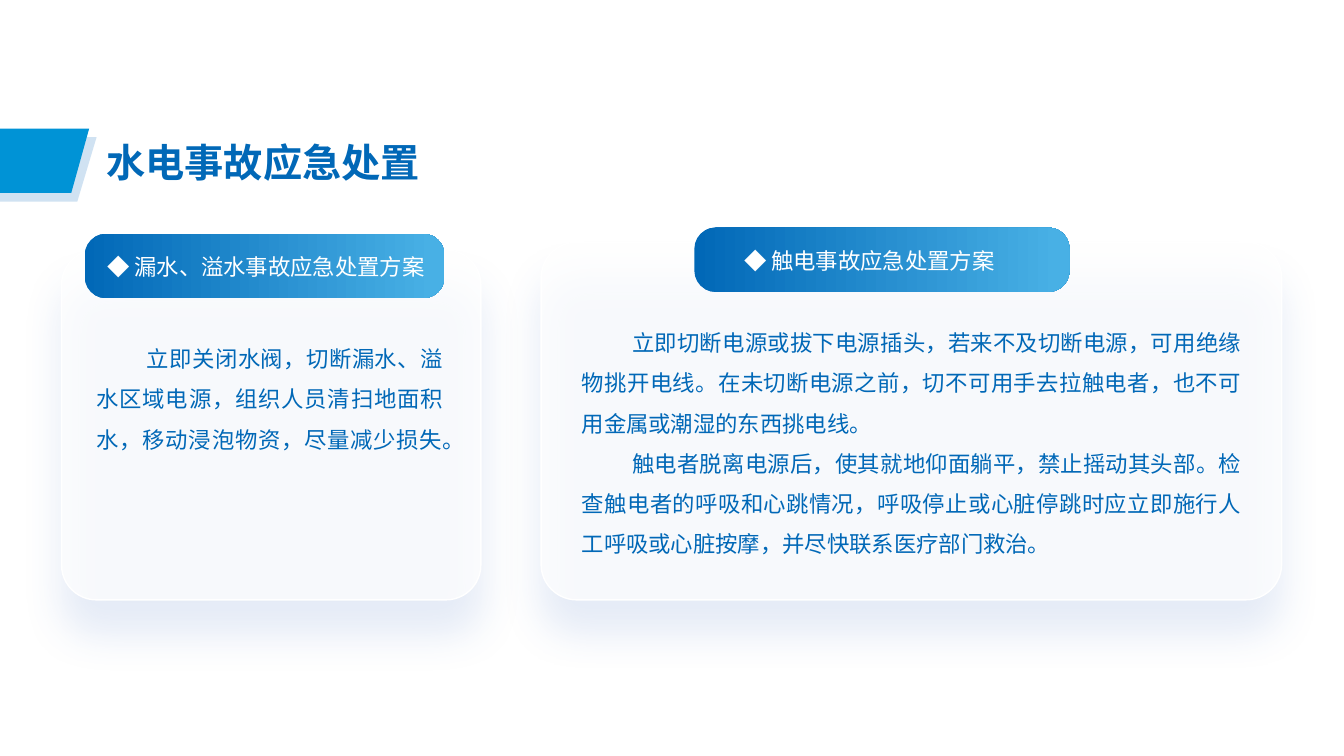
import pptx
import pptx.util
import pptx.dml.color
import pptx.enum.shapes
import pptx.enum.text
import lxml.etree
from pptx.oxml.ns import qn

Pt = pptx.util.Pt
RGB = pptx.dml.color.RGBColor.from_string
KIND = pptx.enum.shapes.MSO_SHAPE
ALIGN = pptx.enum.text.PP_ALIGN

theme = {
    "blue": "0168B7", "sky": "48B0E5", "tab": "0093D6", "pale": "BDD7EE",
    "white": "FFFFFF", "shade": "4472C4",
    "title": 28, "text": 16,
    "sans": "Noto Sans CJK SC", "label": "Noto Sans CJK JP",
}

deck = pptx.Presentation()
deck.slide_width, deck.slide_height = Pt(960), Pt(540)
slide = deck.slides.add_slide(deck.slide_layouts[6])


def add_shape(shapes, kind, box, color=None, alpha=100):
    shape = shapes.add_shape(kind, *[Pt(n) for n in box])
    shape.shadow.inherit = False
    shape.line.fill.background()
    if color:
        shape.fill.solid()
        shape.fill.fore_color.rgb = RGB(theme[color])
        if alpha < 100:
            tint = shape.fill._xPr.find(qn("a:solidFill"))[0]
            lxml.etree.SubElement(tint, qn("a:alpha"), val=str(alpha * 1000))
    return shape


def add_text(shapes, box, lines, size, color, font="sans", inset=True,
             bold=False, align=None, space=None, indent=0):
    area = shapes.add_textbox(*[Pt(n) for n in box])
    frame = area.text_frame
    frame.word_wrap = True
    if not inset:
        frame.margin_left = frame.margin_right = 0
        frame.margin_top = frame.margin_bottom = 0
    frame.text = "\n".join(lines)
    for para in frame.paragraphs:
        para.alignment = align
        para.line_spacing = space
        if indent:
            para._p.get_or_add_pPr().set("indent", str(Pt(indent)))
        para.font.size = Pt(theme[size])
        para.font.bold = bold
        para.font.color.rgb = RGB(theme[color])
        para.font.name = theme[font]
        lxml.etree.SubElement(para.font._rPr, qn("a:ea"), typeface=theme[font])


tabs = [
    ((11.5, 86.5, 46, 69), "pale", 71),
    ((8.7, 82.8, 46, 64), "tab", 100),
]
for box, color, alpha in tabs:
    tab = add_shape(slide.shapes, KIND.FLOWCHART_MANUAL_INPUT, box, color, alpha)
    tab.rotation = 270
    tab._element.spPr.find(qn("a:xfrm")).set("flipV", "1")

add_text(slide.shapes, (69, 95, 411, 41), ["水电事故应急处置"], "title", "blue", bold=True)

cards = [
    {
        "card": (44, 178.5, 299.5, 250),
        "body": (69, 237, 247.7, 83.5),
        "pill": (60.5, 167, 257, 46),
        "label": (76.5, 177, 245, 18),
        "head": "◆ 漏水、溢水事故应急处置方案",
        "lines": ["立即关闭水阀，切断漏水、溢水区域电源，组织人员清扫地面积水，移动浸泡物资，尽量减少损失。"],
    },
    {
        "card": (386.5, 173, 529, 255.5),
        "body": (415.5, 225.5, 471.6, 171.5),
        "pill": (496, 162.5, 268, 46),
        "label": (531.5, 172.8, 255, 21.5),
        "head": "◆ 触电事故应急处置方案",
        "lines": [
            "立即切断电源或拔下电源插头，若来不及切断电源，可用绝缘物挑开电线。在未切断电源之前，切不可用手去拉触电者，也不可用金属或潮湿的东西挑电线。",
            "触电者脱离电源后，使其就地仰面躺平，禁止摇动其头部。检查触电者的呼吸和心跳情况，呼吸停止或心脏停跳时应立即施行人工呼吸或心脏按摩，并尽快联系医疗部门救治。",
        ],
    },
]

for item in cards:
    card = add_shape(slide.shapes, KIND.ROUNDED_RECTANGLE, item["card"], "white", 73)
    card.adjustments[0] = 0.1
    card.line.color.rgb = RGB(theme["white"])
    card.line.width = Pt(1)
    glow = card._element.spPr.find(qn("a:effectLst"))
    cast = lxml.etree.SubElement(
        glow, qn("a:outerShdw"), blurRad=str(Pt(29)), dist=str(Pt(24)),
        dir="5400000", algn="t", rotWithShape="0")
    tint = lxml.etree.SubElement(cast, qn("a:srgbClr"), val=theme["shade"])
    lxml.etree.SubElement(tint, qn("a:alpha"), val="18000")
    add_text(slide.shapes, item["body"], item["lines"], "text", "blue",
             inset=False, align=ALIGN.JUSTIFY, space=1.5, indent=36)

for item in cards:
    group = slide.shapes.add_group_shape()
    pill = add_shape(group.shapes, KIND.ROUNDED_RECTANGLE, item["pill"])
    pill.adjustments[0] = 0.33
    pill.fill.gradient()
    pill.fill.gradient_angle = 0
    for stop, color, place in zip(pill.fill.gradient_stops, ("blue", "sky"), (0, 0.97)):
        stop.color.rgb = RGB(theme[color])
        stop.position = place
    add_text(group.shapes, item["label"], [item["head"]], "text", "white",
             font="label", inset=False, space=1.2)

deck.save("out.pptx")
